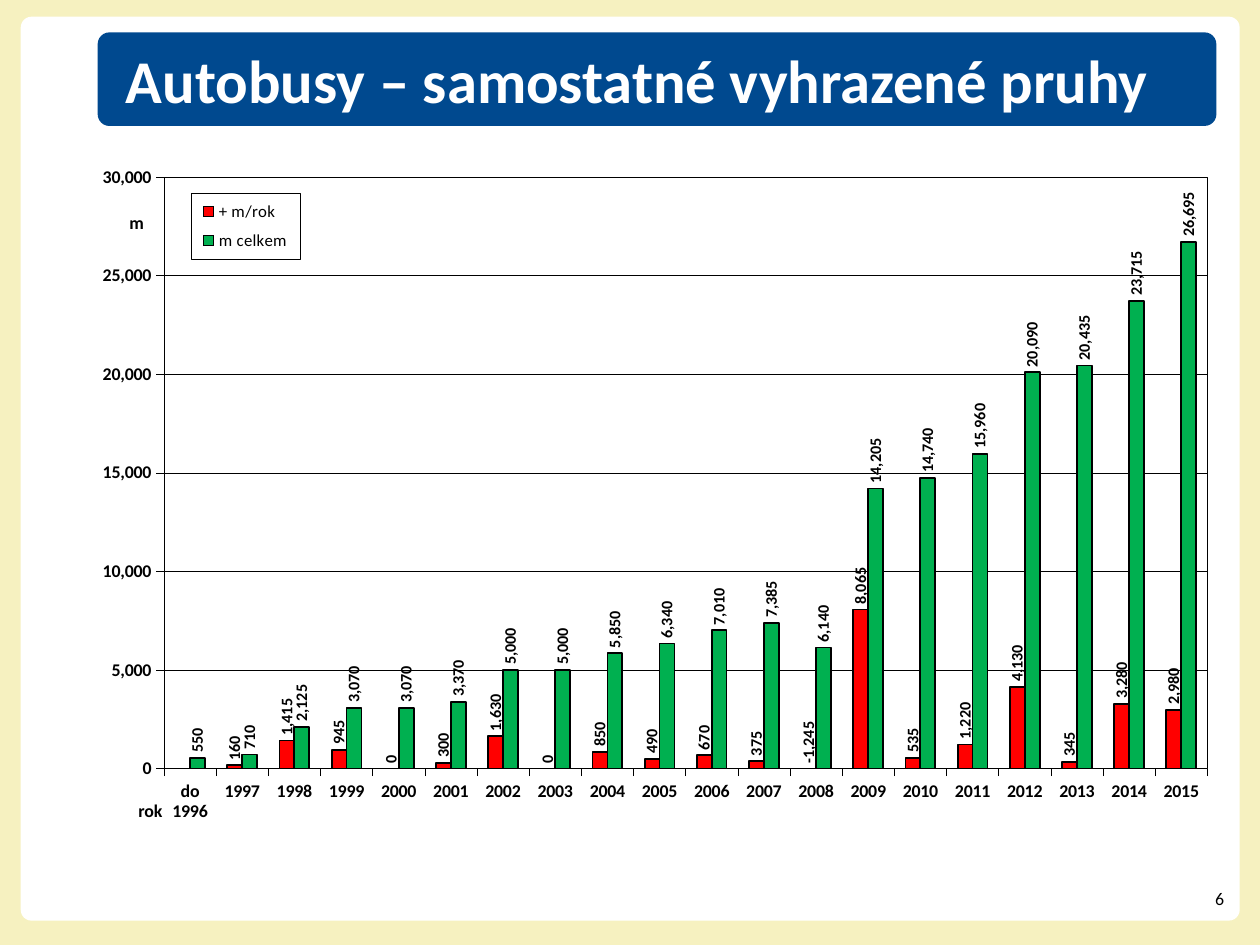
from dataclasses import dataclass
from lxml.etree import SubElement
from pptx import Presentation
from pptx.chart.data import CategoryChartData
from pptx.dml.color import RGBColor
from pptx.enum.chart import XL_CHART_TYPE, XL_LABEL_POSITION, XL_LEGEND_POSITION, XL_TICK_MARK
from pptx.enum.shapes import MSO_SHAPE
from pptx.enum.text import MSO_ANCHOR, PP_ALIGN
from pptx.oxml import parse_xml
from pptx.oxml.ns import nsdecls, qn
from pptx.util import Cm, Pt


@dataclass(frozen=True)
class Theme:
    font: str = "Calibri"
    base_font: str = "Roboto"
    cream: RGBColor = RGBColor(0xF6, 0xF1, 0xC0)
    white: RGBColor = RGBColor(0xFF, 0xFF, 0xFF)
    blue: RGBColor = RGBColor(0x00, 0x49, 0x8F)
    black: RGBColor = RGBColor(0x00, 0x00, 0x00)
    red: RGBColor = RGBColor(0xFF, 0x00, 0x00)
    green: RGBColor = RGBColor(0x00, 0xB0, 0x50)
    title: Pt = Pt(34)
    base: Pt = Pt(10.2)
    axis: Pt = Pt(10)
    legend: Pt = Pt(9.4)
    label: Pt = Pt(9)


theme = Theme()


def set_font(font, size, color=theme.black, bold=False, name=theme.font):
    font.name, font.size, font.bold = name, size, bold
    font.color.rgb = color


def place(element, **position):
    """Give a chart part a manual layout, in fractions of the chart."""
    for old in element.findall(qn("c:layout")):
        element.remove(old)
    layout = parse_xml(f"<c:layout {nsdecls('c')}><c:manualLayout/></c:layout>")
    values = {"xMode": "edge", "yMode": "edge", **position}
    for tag, value in values.items():
        SubElement(layout[0], qn(f"c:{tag}")).set("val", str(value))
    overlay = element.find(qn("c:overlay"))
    if overlay is None:
        element.insert(0, layout)
    else:
        overlay.addprevious(layout)


prs = Presentation()
prs.slide_width, prs.slide_height = Cm(24.89), Cm(18.67)
s = prs.slides.add_slide(prs.slide_layouts[6])
s.background.fill.solid()
s.background.fill.fore_color.rgb = theme.cream

# White card and blue title band
for left, top, width, height, radius, color in (
    (0.41, 0.33, 24.08, 17.86, 0.012, theme.white),
    (1.93, 0.64, 22.1, 1.85, 0.126, theme.blue),
):
    sp = s.shapes.add_shape(
        MSO_SHAPE.ROUNDED_RECTANGLE, Cm(left), Cm(top), Cm(width), Cm(height))
    sp.adjustments[0] = radius
    sp.shadow.inherit = False
    sp.fill.solid()
    sp.fill.fore_color.rgb = color
    sp.line.fill.background()

# Title and slide number
for text, left, top, width, height, size, color, bold, align in (
    ("Autobusy – samostatné vyhrazené pruhy", 2.49, 0.84, 21.23, 1.45,
     theme.title, theme.white, True, PP_ALIGN.LEFT),
    ("6", 23.77, 17.53, 0.41, 0.43, theme.axis, theme.black, False, PP_ALIGN.RIGHT),
):
    tf = s.shapes.add_textbox(Cm(left), Cm(top), Cm(width), Cm(height)).text_frame
    tf.margin_left = tf.margin_top = tf.margin_right = tf.margin_bottom = 0
    tf.word_wrap = True
    tf.vertical_anchor = MSO_ANCHOR.MIDDLE
    p = tf.paragraphs[0]
    p.alignment = align
    r = p.add_run()
    r.text = text
    set_font(r.font, size, color, bold)

# Chart data
data = CategoryChartData(number_format="#,##0")
data.categories = ["do 1996"] + [str(year) for year in range(1997, 2016)]
data.add_series("+ m/rok", (
    None, 160, 1415, 945, 0, 300, 1630, 0, 850, 490,
    670, 375, -1245, 8065, 535, 1220, 4130, 345, 3280, 2980))
data.add_series("m celkem", (
    550, 710, 2125, 3070, 3070, 3370, 5000, 5000, 5850, 6340,
    7010, 7385, 6140, 14205, 14740, 15960, 20090, 20435, 23715, 26695))
chart = s.shapes.add_chart(
    XL_CHART_TYPE.COLUMN_CLUSTERED, Cm(1.85), Cm(3.25), Cm(22.07), Cm(13.72), data).chart
set_font(chart.font, theme.base, name=theme.base_font)
chart.has_title = False

# Columns with upright value labels
plot = chart.plots[0]
plot.gap_width, plot.overlap = 150, 0
plot.vary_by_categories = False
for series, color in zip(plot.series, (theme.red, theme.green)):
    series.invert_if_negative = False
    series.format.fill.solid()
    series.format.fill.fore_color.rgb = color
    series.format.line.color.rgb = theme.black
    series.format.line.width = Pt(1)
    labels = series.data_labels
    labels.show_value = True
    labels.position = XL_LABEL_POSITION.OUTSIDE_END
    labels.number_format, labels.number_format_is_linked = "#,##0", False
    set_font(labels.font, theme.label, bold=True)
    body = labels._element.find(".//" + qn("a:bodyPr"))
    body.set("rot", "-5400000")
    body.set("vert", "horz")

# Axes with horizontal titles
value_axis = chart.value_axis
value_axis.minimum_scale, value_axis.maximum_scale = 0, 30000
value_axis.major_unit = 5000
value_axis.tick_labels.number_format = "#,##0"
value_axis.tick_labels.number_format_is_linked = False
value_axis.has_major_gridlines = True
lines = [value_axis.major_gridlines.format.line]
for axis, text, x, y in (
    (chart.category_axis, "rok", 0.037, 0.91),
    (value_axis, "m", 0.029, 0.062),
):
    axis.major_tick_mark = XL_TICK_MARK.OUTSIDE
    axis.minor_tick_mark = XL_TICK_MARK.NONE
    set_font(axis.tick_labels.font, theme.axis, bold=True)
    lines.append(axis.format.line)
    r = axis.axis_title.text_frame.paragraphs[0].add_run()
    r.text = text
    set_font(r.font, theme.axis, bold=True)
    title = axis.axis_title._element
    body = title.find(".//" + qn("a:bodyPr"))
    body.set("rot", "0")
    body.set("vert", "horz")
    place(title, x=x, y=y)
for line in lines:
    line.color.rgb = theme.black
    line.width = Pt(0.25)

# Legend and plot area, each in a thin frame
chart.has_legend = True
legend = chart.legend
legend.position = XL_LEGEND_POSITION.RIGHT
legend.include_in_layout = False
set_font(legend.font, theme.legend)
place(legend._element, x=0.087, y=0.041, w=0.098, h=0.095)
plot_area = chart._chartSpace.chart.plotArea
place(plot_area, layoutTarget="inner", x=0.063, y=0.018, w=0.934, h=0.852)
plot_layout = plot_area.find(qn("c:layout"))[0]
plot_layout.insert(0, plot_layout.find(qn("c:layoutTarget")))
for part in (legend._element, plot_area):
    frame = parse_xml(
        f"<c:spPr {nsdecls('c', 'a')}><a:solidFill><a:srgbClr val='{theme.white}'/></a:solidFill>"
        f"<a:ln w='{Pt(0.25)}'><a:solidFill><a:srgbClr val='{theme.black}'/></a:solidFill></a:ln>"
        "</c:spPr>")
    text_style = part.find(qn("c:txPr"))
    if text_style is None:
        part.append(frame)
    else:
        text_style.addprevious(frame)

prs.save("out.pptx")
